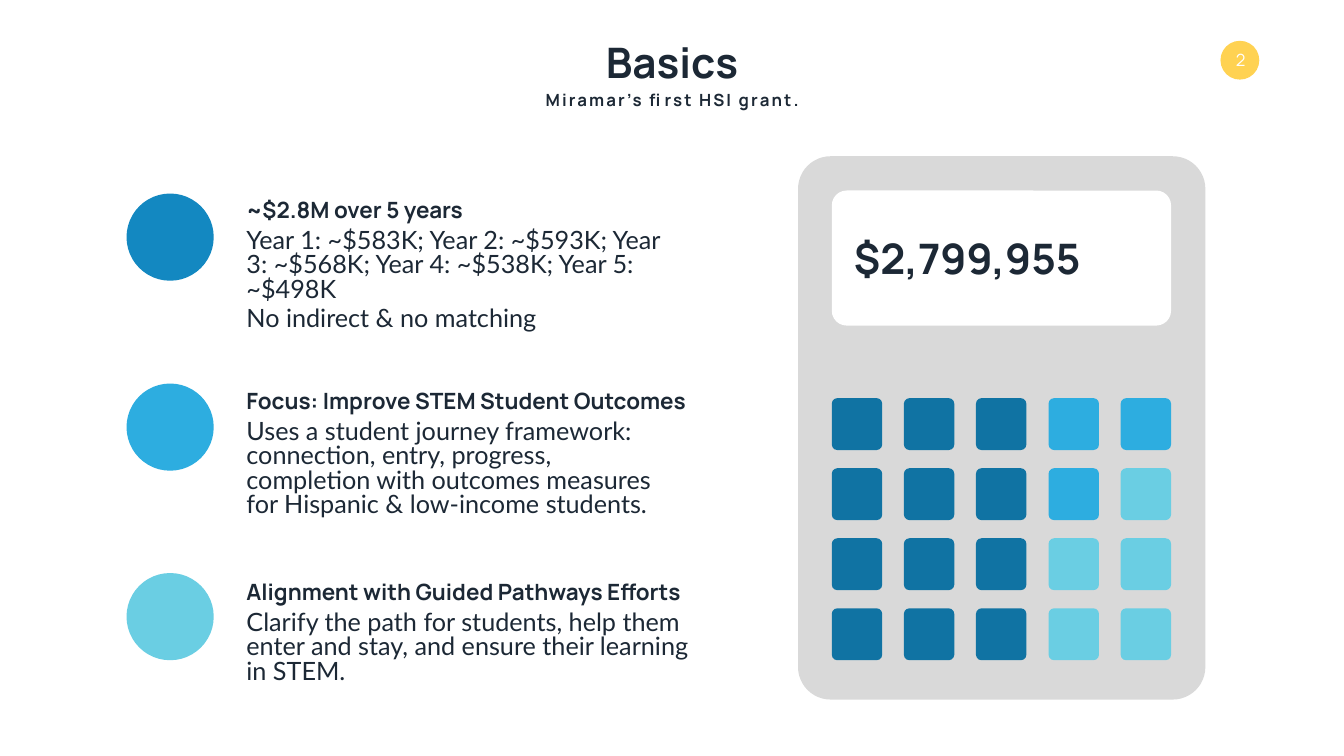
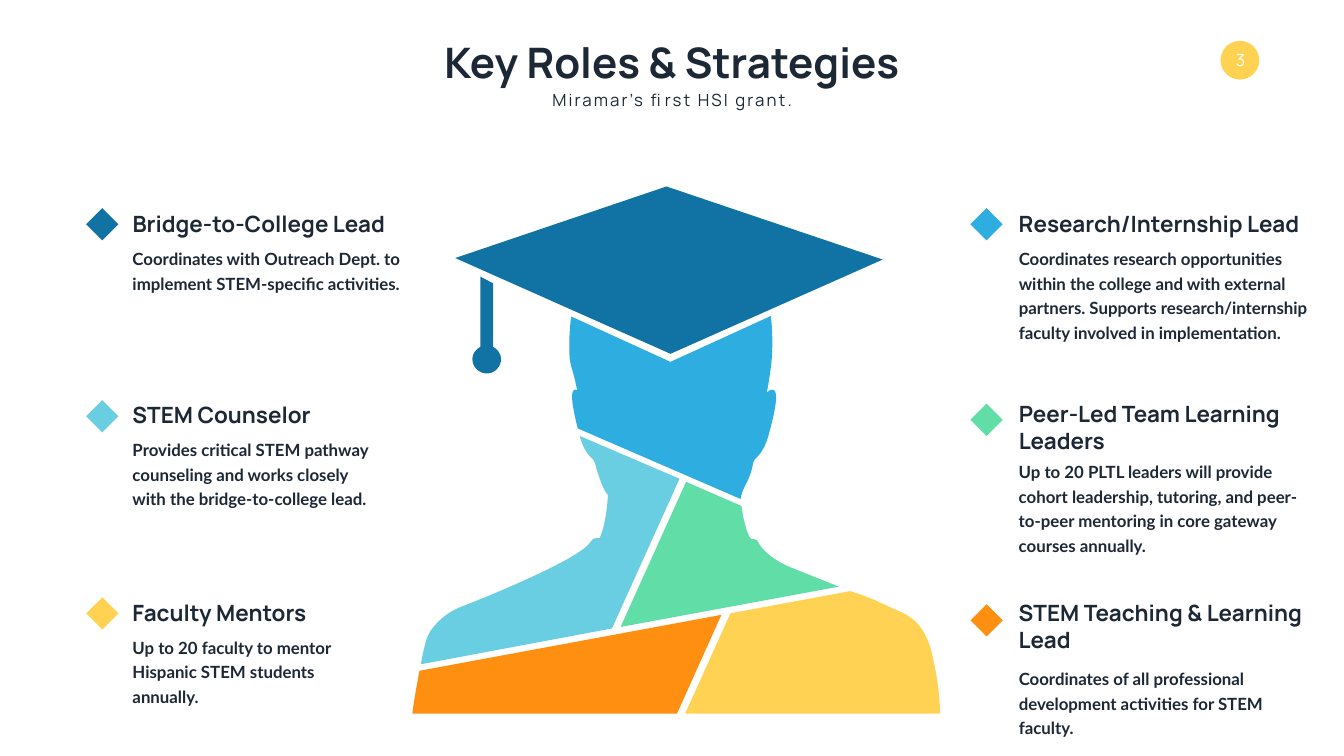
from lxml.etree import SubElement as Sub
from pptx import Presentation
from pptx.dml.color import RGBColor
from pptx.enum.shapes import MSO_SHAPE as Kind
from pptx.enum.text import MSO_ANCHOR as Anchor, MSO_AUTO_SIZE as Auto, PP_ALIGN as Align
from pptx.oxml.ns import qn
from pptx.util import Pt

PX = 9144
INK = RGBColor(0x1C, 0x28, 0x35)
WHITE = RGBColor(0xFF, 0xFF, 0xFF)
GREY = RGBColor(0xD9, 0xD9, 0xD9)
NAVY = RGBColor(0x10, 0x73, 0xA3)
BLUE = RGBColor(0x13, 0x88, 0xC1)
SKY = RGBColor(0x2D, 0xAD, 0xE0)
AQUA = RGBColor(0x6A, 0xCE, 0xE3)
GREEN = RGBColor(0x61, 0xDD, 0xA8)
GOLD = RGBColor(0xFF, 0xD2, 0x53)
BADGE = RGBColor(0xFF, 0xD2, 0x52)
ORANGE = RGBColor(0xFF, 0x8F, 0x10)

BIG = dict(name="Manrope", size=Pt(60), bold=True)
HEAD = dict(name="Manrope", size=Pt(32), bold=True)
SUB = dict(name="Manrope", size=Pt(24), bold=True)
LIGHT = dict(name="Manrope", size=Pt(24), bold=False)
FACT = dict(name="Lato", size=Pt(36), bold=False)
DUTY = dict(name="Lato", size=Pt(24), bold=True)

MID = dict(alignment=Align.CENTER, space_before=Pt(0))
LEFT = dict(alignment=Align.LEFT)
FACTS = dict(line_spacing=Pt(35), space_before=Pt(7))
DUTIES = dict(line_spacing=Pt(35), space_before=Pt(5))

LINE = dict(word_wrap=False, auto_size=Auto.SHAPE_TO_FIT_TEXT, vertical_anchor=Anchor.MIDDLE)
TOP = dict(LINE, vertical_anchor=Anchor.TOP)
WRAP = dict(TOP, word_wrap=True)
FIXED = dict(LINE, auto_size=Auto.NONE)


def draw(slide, kind, box, fill, adj=None):
    shape = slide.shapes.add_shape(kind, *[n * PX for n in box])
    shape.shadow.inherit = False
    shape.fill.solid()
    shape.fill.fore_color.rgb = fill
    shape.line.fill.background()
    if adj:
        shape.adjustments[0] = adj


def write(shape, box, text, font, para, frame, ink=INK, gap=0):
    for key, n in zip(("left", "top", "width", "height"), box):
        setattr(shape, key, n * PX)
    body = shape.text_frame
    body.text = text
    for key, value in frame.items():
        setattr(body, key, value)
    for p in body.paragraphs:
        for key, value in para.items():
            setattr(p, key, value)
        for run in p.runs:
            for key, value in font.items():
                setattr(run.font, key, value)
            run.font.color.rgb = ink
            if gap:
                run._r.get_or_add_rPr().set("spc", str(gap))


deck = Presentation()
deck.slide_width = 2666 * PX
deck.slide_height = 1500 * PX

tops = [
    ("Basics", (1182, 67, 302, 111), SUB),
    ("Key Roles & Strategies", (841, 67, 983, 111), LIGHT),
]
for num, (name, box, style) in enumerate(tops, 2):
    slide = deck.slides.add_slide(deck.slide_layouts[0])
    draw(slide, Kind.OVAL, (2421, 81, 77, 77), BADGE)
    write(slide.shapes.add_textbox(0, 0, 0, 0), (2421, 79, 80, 80),
          str(num), LIGHT, MID, FIXED, WHITE)
    write(slide.shapes.title, box, name, BIG, MID, TOP)
    write(slide.placeholders[1], (1069, 172, 529, 50),
          "Miramar’s first HSI grant.", style, MID, TOP, gap=300)

basics, roles = deck.slides

draw(basics, Kind.ROUNDED_RECTANGLE, (1583, 310, 808, 1078), GREY, 0.08)
for row in range(4):
    for col in range(5):
        fill = NAVY if col < 3 else SKY if row + col < 5 else AQUA
        box = (1650 + col * 430 // 3, 790 + row * 139, 100, 103)
        draw(basics, Kind.ROUNDED_RECTANGLE, box, fill, 0.11)
draw(basics, Kind.ROUNDED_RECTANGLE, (1650, 378, 673, 268), WHITE, 0.11)

facts = [
    (BLUE, 384, 383, 479, 853, 219, "~$2.8M over 5 years",
     "Year 1: ~$583K; Year 2: ~$593K; Year 3: ~$568K; Year 4: ~$538K; Year 5: ~$498K\n"
     "No indirect & no matching"),
    (SKY, 761, 762, 944, 853, 206, "Focus: Improve STEM Student Outcomes",
     "Uses a student journey framework: connection, entry, progress, completion with "
     "outcomes measures for Hispanic & low-income students."),
    (AQUA, 1137, 1141, 947, 910, 157, "Alignment with Guided Pathways Efforts",
     "Clarify the path for students, help them enter and stay, and ensure their learning "
     "in STEM."),
]
for fill, y, top, wide, span, high, head, text in facts:
    draw(basics, Kind.OVAL, (251, y, 173, 173), fill)
    write(basics.shapes.add_textbox(0, 0, 0, 0), (479, top, wide, 64), head, HEAD, LEFT, LINE)
    write(basics.shapes.add_textbox(0, 0, 0, 0), (479, top + 68, span, high),
          text, FACT, FACTS, WRAP)
write(basics.shapes.add_textbox(0, 0, 0, 0), (1684, 456, 482, 111),
      "$2,799,955", BIG, LEFT, LINE)

cap = [(1322, 370), (903, 512), (1330, 702), (1751, 515)]
tassel = [
    (953, 549), (953, 688), (944, 693, 937, 702, 937, 712), (937, 728, 950, 741, 966, 741),
    (981, 741, 994, 728, 994, 712), (994, 702, 987, 693, 978, 688), (978, 562),
]
face = [
    (1529, 627), (1330, 718), (1133, 628), (1130, 653, 1128, 680, 1130, 711),
    (1131, 724, 1140, 747, 1142, 761), (1143, 768, 1144, 768, 1145, 774),
    (1144, 773, 1138, 771, 1136, 778), (1132, 790, 1139, 821, 1146, 850), (1469, 990),
    (1473, 964, 1488, 956, 1494, 918), (1495, 908, 1511, 907, 1523, 869),
    (1534, 830, 1548, 774, 1533, 773), (1532, 773, 1530, 773, 1528, 774),
    (1526, 775, 1523, 777, 1521, 779), (1524, 765, 1529, 734, 1531, 711),
    (1533, 678, 1532, 650, 1529, 627),
]
neck = [
    (1150, 865), (1151, 866, 1151, 867, 1151, 869), (1163, 908, 1178, 908, 1180, 918),
    (1187, 947, 1200, 978, 1206, 982), (1206, 982, 1204, 1030, 1192, 1062),
    (1187, 1077, 1183, 1058, 1171, 1076), (1153, 1104, 1015, 1165, 917, 1203),
    (877, 1218, 851, 1250, 846, 1269), (842, 1282, 838, 1300, 835, 1318),
    (1214, 1247), (1348, 950),
]
collar = [
    (1361, 956), (1231, 1244), (1664, 1164), (1637, 1153, 1609, 1142, 1569, 1126),
    (1513, 1103, 1501, 1070, 1505, 1077), (1497, 1063, 1491, 1076, 1486, 1064),
    (1477, 1044, 1473, 1020, 1471, 1004),
]
chest = [(1431, 1220), (832, 1331), (826, 1364, 820, 1397, 818, 1416), (1343, 1416)]
arm = [
    (1686, 1173), (1449, 1217), (1359, 1416), (1865, 1416),
    (1864, 1382, 1860, 1349, 1853, 1317), (1847, 1285, 1838, 1251, 1811, 1229),
    (1798, 1218, 1781, 1212, 1764, 1204), (1741, 1193, 1717, 1182, 1686, 1173),
]

grad = roles.shapes.add_group_shape()
parts = [([cap, tassel], NAVY), ([face], SKY), ([neck], AQUA),
         ([collar], GREEN), ([chest], ORANGE), ([arm], GOLD)]
for loops, fill in parts:
    pen = grad.shapes.build_freeform(*loops[0][0], scale=PX)
    for loop in loops:
        if loop is not loops[0]:
            pen.move_to(*loop[0])
        pen.add_line_segments([node[-2:] for node in loop[1:]], close=True)
    part = pen.convert_to_shape()
    part.shadow.inherit = False
    part.fill.solid()
    part.fill.fore_color.rgb = fill
    part.line.fill.background()
    nodes = [node for loop in loops for node in loop[1:]]
    ends = [node[-2:] for loop in loops for node in loop]
    left, top = [min(axis) for axis in zip(*ends)]
    for line, node in zip(list(part._element.iter(qn("a:lnTo"))), nodes):
        if len(node) == 6:
            line.tag = qn("a:cubicBezTo")
            line.remove(line[0])
            for x, y in zip(node[::2], node[1::2]):
                Sub(line, qn("a:pt"), x=str(x - left), y=str(y - top))

jobs = [
    (NAVY, 171, 413, (253, 412, 565, 64), (253, 480, 564, 153), "Bridge-to-College Lead",
     "Coordinates with Outreach Dept. to implement STEM-specific activities."),
    (AQUA, 171, 794, (253, 791, 386, 64), (253, 859, 490, 202), "STEM Counselor",
     "Provides critical STEM pathway counseling and works closely with the "
     "bridge-to-college lead."),
    (GOLD, 171, 1185, (253, 1183, 393, 64), (253, 1251, 490, 153), "Faculty Mentors",
     "Up to 20 faculty to mentor Hispanic STEM students annually."),
    (SKY, 1925, 413, (2011, 412, 616, 64), (2011, 480, 615, 251), "Research/Internship Lead",
     "Coordinates research opportunities within the college and with external partners. "
     "Supports research/internship faculty involved in implementation."),
    (GREEN, 1925, 801, (2011, 788, 592, 118), (2011, 903, 614, 202),
     "Peer-Led Team Learning\nLeaders",
     "Up to 20 PLTL leaders will provide cohort leadership, tutoring, and peer-to-peer "
     "mentoring in core gateway courses annually."),
    (ORANGE, 1925, 1199, (2011, 1183, 633, 118), (2011, 1314, 545, 152),
     "STEM Teaching & Learning\nLead",
     "Coordinates of all professional development activities for STEM faculty."),
]
for fill, x, y, *rest in jobs:
    draw(roles, Kind.DIAMOND, (x, y, 64, 64), fill)
for fill, x, y, top, low, head, text in jobs:
    write(roles.shapes.add_textbox(0, 0, 0, 0), top, head, HEAD, LEFT, LINE)
    write(roles.shapes.add_textbox(0, 0, 0, 0), low, text, DUTY, DUTIES, WRAP)

deck.save("out.pptx")
